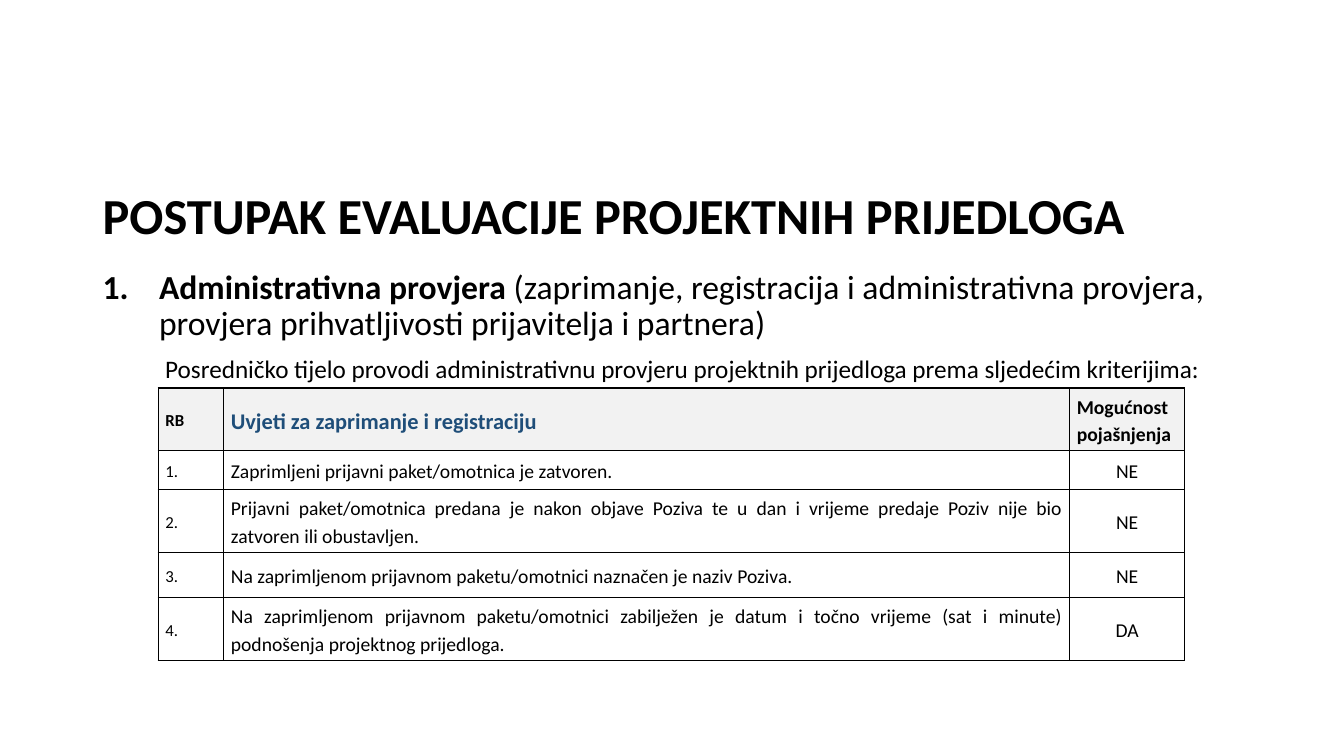
from lxml.etree import SubElement
from pptx import Presentation
from pptx.dml.color import RGBColor
from pptx.enum.text import MSO_ANCHOR, PP_ALIGN
from pptx.oxml.ns import qn
from pptx.util import Inches, Pt

BLACK = "000000"
HEADING_BLUE = "1F4E79"
HEADER_GRAY = "F2F2F2"


def color(value):
    return RGBColor.from_string(value)


def write(paragraph, text, size, bold=False, ink=BLACK, align=None, spacing=0.9):
    """Append a formatted run to the paragraph."""
    paragraph.alignment = align
    paragraph.line_spacing = spacing
    run = paragraph.add_run()
    run.text = text
    run.font.name = "Calibri"
    run.font.size = Pt(size)
    run.font.bold = bold
    run.font.color.rgb = color(ink)


presentation = Presentation()
presentation.slide_width = Inches(13.33)
presentation.slide_height = Inches(7.5)
slide = presentation.slides.add_slide(presentation.slide_layouts[6])

# Title
title = slide.shapes.add_textbox(Inches(0.92), Inches(1.44), Inches(11.5), Inches(1.45))
title.text_frame.word_wrap = True
title.text_frame.vertical_anchor = MSO_ANCHOR.MIDDLE
write(title.text_frame.paragraphs[0], "POSTUPAK EVALUACIJE PROJEKTNIH PRIJEDLOGA", 36, bold=True)

# Numbered step and its introduction
body = slide.shapes.add_textbox(Inches(0.92), Inches(2.63), Inches(11.5), Inches(4.33))
body.text_frame.word_wrap = True
step = body.text_frame.paragraphs[0]
step_properties = step._p.get_or_add_pPr()
step_properties.set("marL", str(Inches(0.56)))
step_properties.set("indent", str(-Inches(0.56)))
SubElement(step_properties, qn("a:buFont"), typeface="+mj-lt")
SubElement(step_properties, qn("a:buAutoNum"), type="arabicPeriod")
write(step, "Administrativna provjera ", 24, bold=True)
write(step, "(zaprimanje, registracija i administrativna provjera, "
      "provjera prihvatljivosti prijavitelja i partnera)", 24)

introduction = body.text_frame.add_paragraph()
introduction._p.get_or_add_pPr().set("marL", str(Inches(0.62)))
introduction.space_before = Pt(10)
write(introduction, "Posredničko tijelo provodi administrativnu provjeru "
      "projektnih prijedloga prema sljedećim kriterijima:", 18)

# Criteria table
criteria = [
    ("RB", "Uvjeti za zaprimanje i registraciju", "Mogućnost pojašnjenja"),
    ("1.", "Zaprimljeni prijavni paket/omotnica je zatvoren.", "NE"),
    ("2.", "Prijavni paket/omotnica predana je nakon objave Poziva te u dan i vrijeme "
     "predaje Poziv nije bio zatvoren ili obustavljen.", "NE"),
    ("3.", "Na zaprimljenom prijavnom paketu/omotnici naznačen je naziv Poziva.", "NE"),
    ("4.", "Na zaprimljenom prijavnom paketu/omotnici zabilježen je datum i točno vrijeme "
     "(sat i minute) podnošenja projektnog prijedloga.", "DA"),
]
column_widths = [0.65, 8.39, 1.14]
row_heights = [0.62, 0.39, 0.62, 0.45, 0.62]
header_sizes = [12, 16, 14]
body_sizes = [12, 14, 14]

table = slide.shapes.add_table(
    len(criteria), len(column_widths), Inches(1.57), Inches(3.85),
    Inches(sum(column_widths)), Inches(sum(row_heights))).table
table.horz_banding = False
for column, width in zip(table.columns, column_widths):
    column.width = Inches(width)
for row, height in zip(table.rows, row_heights):
    row.height = Inches(height)

for row_index, texts in enumerate(criteria):
    is_header = row_index == 0
    sizes = header_sizes if is_header else body_sizes
    for column_index, text in enumerate(texts):
        cell = table.cell(row_index, column_index)
        cell.vertical_anchor = MSO_ANCHOR.MIDDLE
        cell.margin_left = cell.margin_right = Inches(0.07)
        cell.margin_top = cell.margin_bottom = 0
        cell_properties = cell._tc.get_or_add_tcPr()
        for side in ("a:lnL", "a:lnR", "a:lnT", "a:lnB"):
            border = SubElement(cell_properties, qn(side), w=str(Pt(1)))
            border_fill = SubElement(border, qn("a:solidFill"))
            SubElement(border_fill, qn("a:srgbClr"), val=BLACK)
        if is_header:
            cell.fill.solid()
            cell.fill.fore_color.rgb = color(HEADER_GRAY)
        else:
            cell.fill.background()
        is_answer = column_index == 2 and not is_header
        write(cell.text_frame.paragraphs[0], text, sizes[column_index], bold=is_header,
              ink=HEADING_BLUE if is_header and column_index == 1 else BLACK,
              align=PP_ALIGN.CENTER if is_answer else PP_ALIGN.JUSTIFY, spacing=1.15)

presentation.save("out.pptx")
